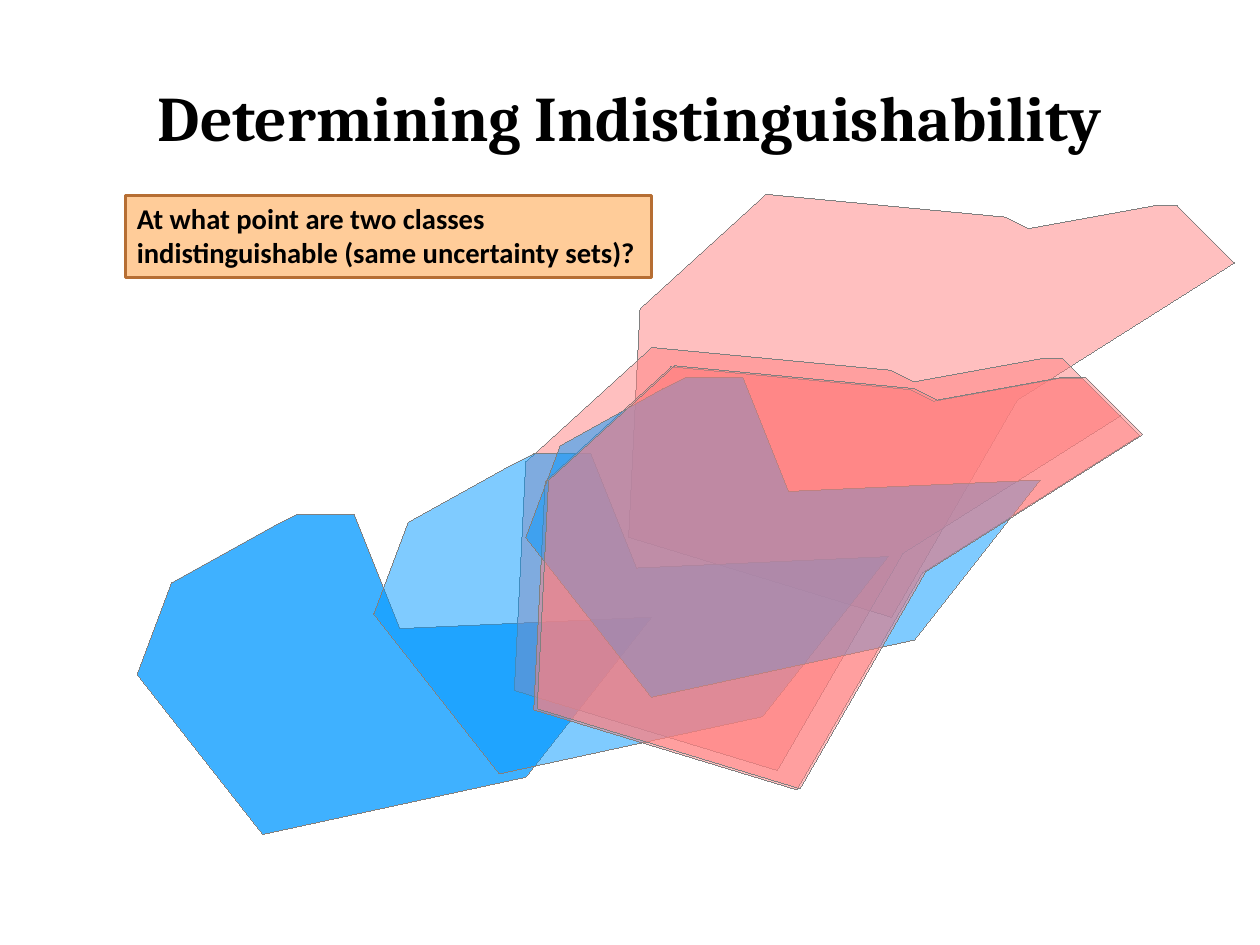
import pptx
import pptx.dml.color
import pptx.enum.shapes
import pptx.enum.text
import pptx.oxml
import pptx.oxml.ns
import pptx.util

BLACK = pptx.dml.color.RGBColor(0x00, 0x00, 0x00)
GREY = pptx.dml.color.RGBColor(0x80, 0x80, 0x80)
BLUE = pptx.dml.color.RGBColor(0x00, 0x99, 0xFF)
RED = pptx.dml.color.RGBColor(0xFF, 0x80, 0x80)
PEACH = pptx.dml.color.RGBColor(0xFF, 0xCC, 0x99)
BROWN = pptx.dml.color.RGBColor(0xB6, 0x6E, 0x33)

# Class outlines, in grid cells from the outline's left top corner
BLUE_CLASS = [(12, 1), (3, 6), (0, 14), (11, 28), (34, 23), (45, 9),
              (23, 10), (19, 0), (15, 0), (14, 0)]
RED_CLASS = [(35, 3), (33, 2), (12, 0), (1, 10), (0, 30), (23, 37),
             (34, 18), (53, 6), (48, 1), (47, 1), (46, 1)]

# Successive positions, back to front: outline, colour, column, row
STEPS = [
    (BLUE_CLASS, BLUE, 12, 45),
    (RED_CLASS, RED, 55, 17),
    (BLUE_CLASS, BLUE, 12, 45),
    (RED_CLASS, RED, 45, 30.4),
    (BLUE_CLASS, BLUE, 32.7, 39.7),
    (RED_CLASS, RED, 46.7, 32.1),
    (BLUE_CLASS, BLUE, 46, 33),
    (RED_CLASS, RED, 47, 32),
]


def write_text(frame, text, font="Calibri", size=18, bold=True, color=BLACK,
               align=pptx.enum.text.PP_ALIGN.LEFT,
               anchor=pptx.enum.text.MSO_ANCHOR.TOP, margins=(0.1, 0.05)):
    frame.word_wrap = True
    frame.auto_size = pptx.enum.text.MSO_AUTO_SIZE.NONE
    frame.vertical_anchor = anchor
    frame.margin_left = frame.margin_right = pptx.util.Inches(margins[0])
    frame.margin_top = frame.margin_bottom = pptx.util.Inches(margins[1])
    para = frame.paragraphs[0]
    para.alignment = align
    span = para.add_run()
    span.text = text
    span.font.name = font
    span.font.size = pptx.util.Pt(size)
    span.font.bold = bold
    span.font.color.rgb = color


class Page:
    """One slide on a grid of square cells, ten to the inch."""

    def __init__(self, deck):
        self.slide = deck.slides.add_slide(deck.slide_layouts[5])

    def cells(self, *counts):
        return [pptx.util.Inches(count / 10) for count in counts]

    def paint(self, shape, fill, line):
        shape.shadow.inherit = False
        shape.fill.solid()
        shape.fill.fore_color.rgb = fill
        shape.line.color.rgb = line

    def title(self, text, left, top, width, height):
        title = self.slide.shapes.title
        title.left, title.top, title.width, title.height = self.cells(
            left, top, width, height)
        write_text(title.text_frame, text, font="Cambria", size=40,
                   align=pptx.enum.text.PP_ALIGN.CENTER,
                   anchor=pptx.enum.text.MSO_ANCHOR.MIDDLE, margins=(0, 0))

    def question(self, text, left, top, width, height):
        box = self.slide.shapes.add_shape(
            pptx.enum.shapes.MSO_SHAPE.RECTANGLE,
            *self.cells(left, top, width, height))
        self.paint(box, PEACH, BROWN)
        box.line.width = pptx.util.Pt(2)
        write_text(box.text_frame, text)

    def region(self, outline, color, column, row):
        points = [self.cells(column + x, row + y) for x, y in outline]
        builder = self.slide.shapes.build_freeform(*points[0])
        builder.add_line_segments(points[1:], close=True)
        shape = builder.convert_to_shape()
        self.paint(shape, color, GREY)
        # Hairline edge and half-transparent fill
        properties = shape.element.spPr
        properties.find(pptx.oxml.ns.qn("a:ln")).set("w", "0")
        tint = properties.find(
            pptx.oxml.ns.qn("a:solidFill") + "/" + pptx.oxml.ns.qn("a:srgbClr"))
        tint.append(pptx.oxml.parse_xml(
            f'<a:alpha {pptx.oxml.ns.nsdecls("a")} val="50000"/>'))


def main():
    deck = pptx.Presentation()
    deck.slide_width = pptx.util.Cm(28)
    deck.slide_height = pptx.util.Cm(21)
    page = Page(deck)

    # Heading and question
    page.title("Determining Indistinguishability", 5.5, 3.3, 99.2, 13.8)
    page.question("At what point are two classes indistinguishable "
                  "(same uncertainty sets)?", 11, 17.1, 46, 7.2)

    # The two classes drawing closer
    for step in STEPS:
        page.region(*step)

    deck.save("out.pptx")


if __name__ == "__main__":
    main()
